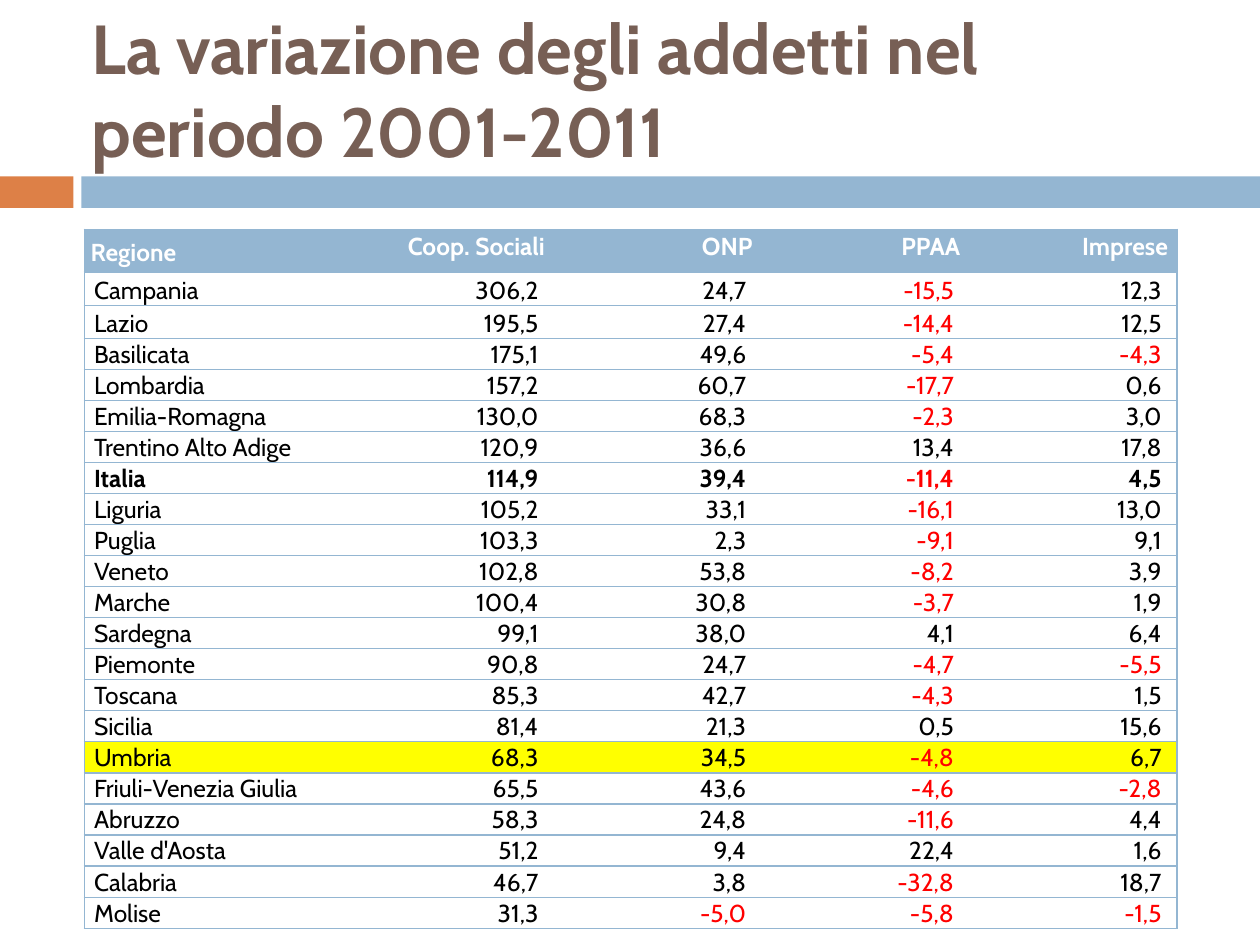
from typing import NamedTuple

from lxml import etree
from pptx import Presentation
from pptx import util as u
from pptx.dml.color import RGBColor
from pptx.enum import shapes, text
from pptx.oxml import ns

FONT = "Cabin"
BROWN = RGBColor(0x77, 0x5F, 0x55)
ORANGE = RGBColor(0xDD, 0x80, 0x47)
BLUE = RGBColor(0x94, 0xB6, 0xD2)
YELLOW = RGBColor(0xFF, 0xFF, 0x00)
RED = RGBColor(0xFF, 0x00, 0x00)
BLACK = RGBColor(0x00, 0x00, 0x00)
WHITE = RGBColor(0xFF, 0xFF, 0xFF)

NO_STYLE = "{2D5ABB26-0587-4C30-8999-92F81FD0307C}"
BORDER_WIDTH = u.Pt(0.79)
EXACT_LINE = u.Pt(13)
LEFT, RIGHT = text.PP_ALIGN.LEFT, text.PP_ALIGN.RIGHT
MIDDLE, BOTTOM = text.MSO_ANCHOR.MIDDLE, text.MSO_ANCHOR.BOTTOM


class Bar(NamedTuple):
    left: float
    width: float
    color: RGBColor


class Region(NamedTuple):
    name: str
    values: tuple[str, ...]
    bold: bool = False
    highlighted: bool = False


BARS = [Bar(0, 42, ORANGE), Bar(46.5, 673.5, BLUE)]
HEADINGS = ["Regione", "Coop. Sociali", "ONP", "PPAA", "Imprese"]
COLUMN_WIDTHS = [149.6] + [118.7] * 4
REGIONS = [
    Region("Campania", ("306,2", "24,7", "-15,5", "12,3")),
    Region("Lazio", ("195,5", "27,4", "-14,4", "12,5")),
    Region("Basilicata", ("175,1", "49,6", "-5,4", "-4,3")),
    Region("Lombardia", ("157,2", "60,7", "-17,7", "0,6")),
    Region("Emilia-Romagna", ("130,0", "68,3", "-2,3", "3,0")),
    Region("Trentino Alto Adige", ("120,9", "36,6", "13,4", "17,8")),
    Region("Italia", ("114,9", "39,4", "-11,4", "4,5"), bold=True),
    Region("Liguria", ("105,2", "33,1", "-16,1", "13,0")),
    Region("Puglia", ("103,3", "2,3", "-9,1", "9,1")),
    Region("Veneto", ("102,8", "53,8", "-8,2", "3,9")),
    Region("Marche", ("100,4", "30,8", "-3,7", "1,9")),
    Region("Sardegna", ("99,1", "38,0", "4,1", "6,4")),
    Region("Piemonte", ("90,8", "24,7", "-4,7", "-5,5")),
    Region("Toscana", ("85,3", "42,7", "-4,3", "1,5")),
    Region("Sicilia", ("81,4", "21,3", "0,5", "15,6")),
    Region("Umbria", ("68,3", "34,5", "-4,8", "6,7"), highlighted=True),
    Region("Friuli-Venezia Giulia", ("65,5", "43,6", "-4,6", "-2,8")),
    Region("Abruzzo", ("58,3", "24,8", "-11,6", "4,4")),
    Region("Valle d'Aosta", ("51,2", "9,4", "22,4", "1,6")),
    Region("Calabria", ("46,7", "3,8", "-32,8", "18,7")),
    Region("Molise", ("31,3", "-5,0", "-5,8", "-1,5")),
]
ROW_HEIGHTS = [24.5, 19.1, 18.7] + [17.6] * (len(REGIONS) - 2)


def write_text(frame, content: str, *, size: float = 14, color: RGBColor = BLACK,
               bold: bool = False, align=LEFT, line_spacing=None) -> None:
    paragraph = frame.paragraphs[0]
    paragraph.alignment = align
    if line_spacing is not None:
        paragraph.line_spacing = line_spacing
    run = paragraph.add_run()
    run.text = content
    run.font.name = FONT
    run.font.size = u.Pt(size)
    run.font.bold = bold
    run.font.color.rgb = color


def add_bar(slide, bar: Bar) -> None:
    shape = slide.shapes.add_shape(shapes.MSO_SHAPE.RECTANGLE, u.Pt(bar.left), u.Pt(100.8),
                                   u.Pt(bar.width), u.Pt(18))
    shape.shadow.inherit = False
    shape.fill.solid()
    shape.fill.fore_color.rgb = bar.color
    shape.line.fill.background()


def format_cell(cell, *, margins: tuple[float, float, float], anchor, sides: str,
                fill: RGBColor | None) -> None:
    left, top, right = margins
    cell.margin_left, cell.margin_top = u.Pt(left), u.Pt(top)
    cell.margin_right, cell.margin_bottom = u.Pt(right), u.Pt(0)
    cell.vertical_anchor = anchor
    properties = cell._tc.get_or_add_tcPr()
    for side in sides:
        line = etree.SubElement(properties, ns.qn(f"a:ln{side}"), w=str(BORDER_WIDTH))
        solid = etree.SubElement(line, ns.qn("a:solidFill"))
        etree.SubElement(solid, ns.qn("a:srgbClr"), val=str(BLUE))
    if fill is None:
        cell.fill.background()
    else:
        cell.fill.solid()
        cell.fill.fore_color.rgb = fill


def border_sides(column: int) -> str:
    outer = {0: "L", len(HEADINGS) - 1: "R"}
    return outer.get(column, "") + "TB"


def add_region_table(slide) -> None:
    frame = slide.shapes.add_table(len(ROW_HEIGHTS), len(HEADINGS), u.Pt(48.2), u.Pt(131),
                                   u.Pt(sum(COLUMN_WIDTHS)), u.Pt(sum(ROW_HEIGHTS)))
    table = frame.table
    table.horz_banding = False
    table._tbl.tblPr.find(ns.qn("a:tableStyleId")).text = NO_STYLE
    for column, width in zip(table.columns, COLUMN_WIDTHS):
        column.width = u.Pt(width)
    for row, height in zip(table.rows, ROW_HEIGHTS):
        row.height = u.Pt(height)

    # Header row
    for column, heading in enumerate(HEADINGS):
        first = column == 0
        cell = table.cell(0, column)
        margin = 3.6 if first else 5.1
        format_cell(cell, margins=(margin, 0, margin), anchor=MIDDLE,
                    sides=border_sides(column), fill=BLUE)
        write_text(cell.text_frame, heading, color=WHITE, bold=True,
                   align=LEFT if first else RIGHT,
                   line_spacing=1.15 if first else EXACT_LINE)

    # One row per region; a trailing space sets the numbers in from the edge
    for row, region in enumerate(REGIONS, start=1):
        fill = YELLOW if region.highlighted else None
        for column, content in enumerate((region.name, *region.values)):
            first = column == 0
            cell = table.cell(row, column)
            format_cell(cell, margins=(5.6, 0.7, 0.7) if first else (0.7, 0.7, 5.6),
                        anchor=BOTTOM, sides=border_sides(column), fill=fill)
            write_text(cell.text_frame, content if first else content + " ",
                       color=RED if content.startswith("-") else BLACK,
                       bold=region.bold, align=LEFT if first else RIGHT,
                       line_spacing=EXACT_LINE if first else None)


def main() -> None:
    presentation = Presentation()
    presentation.slide_width, presentation.slide_height = u.Pt(720), u.Pt(540)
    slide = presentation.slides.add_slide(presentation.slide_layouts[5])

    # Divider bars
    for bar in BARS:
        add_bar(slide, bar)

    # Title
    title = slide.shapes.title
    title.left, title.top = u.Pt(45), u.Pt(11.5)
    title.width, title.height = u.Pt(658), u.Pt(78)
    title.text_frame.word_wrap = True
    title.text_frame.auto_size = text.MSO_AUTO_SIZE.NONE
    title.text_frame.vertical_anchor = MIDDLE
    write_text(title.text_frame, "La variazione degli addetti nel periodo 2001-2011",
               size=39.6, color=BROWN, bold=True)

    # Table of changes by region
    add_region_table(slide)
    presentation.save("out.pptx")


if __name__ == "__main__":
    main()
